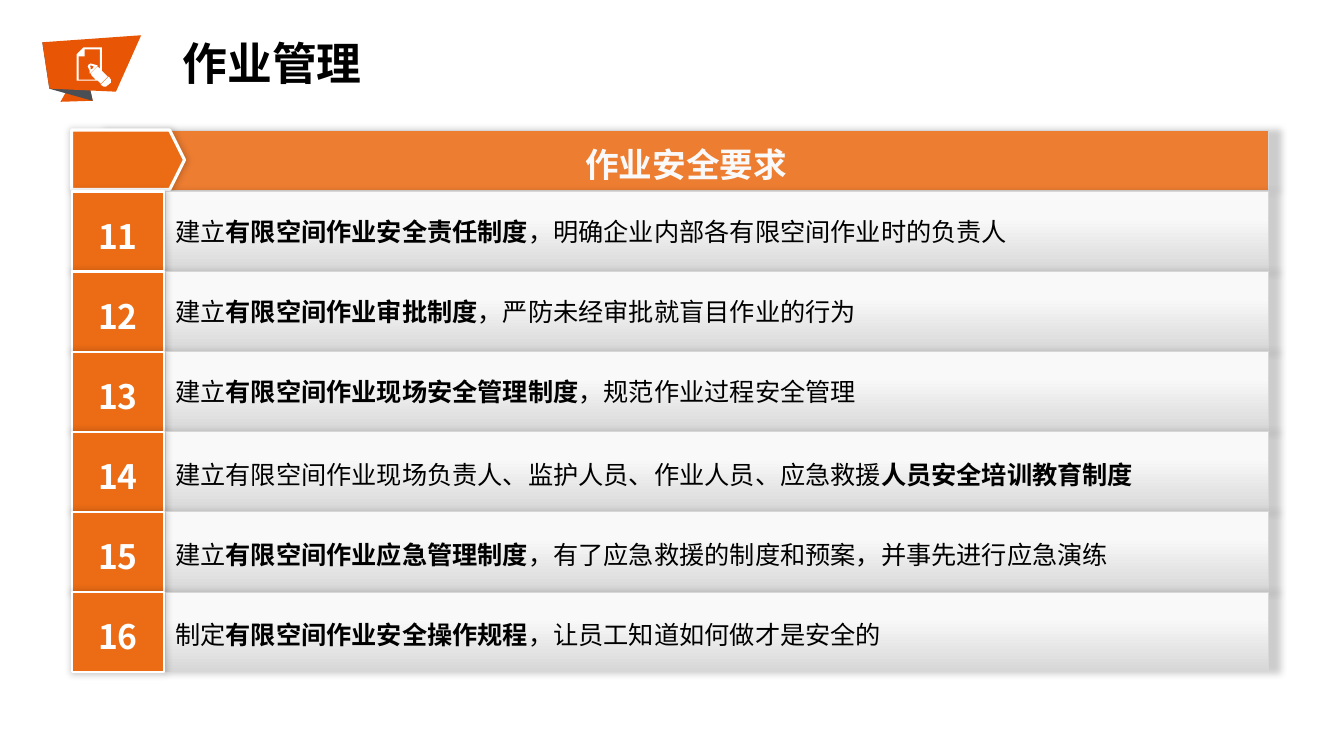
from dataclasses import dataclass

from lxml.etree import SubElement
from pptx import Presentation
from pptx.dml.color import RGBColor
from pptx.enum.shapes import MSO_SHAPE as Preset
from pptx.enum.text import MSO_ANCHOR as Anchor, PP_ALIGN as Align
from pptx.oxml.ns import qn
from pptx.shapes.autoshape import Shape
from pptx.slide import Slide
from pptx.text.text import TextFrame
from pptx.util import Inches, Pt

FONT = "Noto Sans CJK SC"
ORANGE, HEADER_ORANGE, ICON_ORANGE = "EB6C15", "ED7D31", "E85504"
LIGHT, GREY, SLATE, WHITE, BLACK = "F9F9F9", "D7D7D7", "494F54", "FFFFFF", "000000"

# Table grid, in inches
LEFT, BODY_LEFT, RIGHT = 0.71, 1.64, 12.58
HEADER_TOP, BODY_TOP, ROW_PITCH = 1.29, 1.9, 0.794
NUMBER_WIDTH, FIRST_NUMBER = 0.92, 11

Point = tuple[int, int]


@dataclass
class Span:
    text: str
    bold: bool = False


@dataclass
class Requirement:
    spans: list[Span]
    spacing: float = 1.0


@dataclass
class Outline:
    """Closed contours in hundredths of an inch."""
    color: str
    contours: list[list[Point]]


REQUIREMENTS = [
    Requirement([Span("建立"), Span("有限空间作业安全责任制度", True),
                 Span("，明确企业内部各有限空间作业时的负责人")]),
    Requirement([Span("建立"), Span("有限空间作业审批制度", True),
                 Span("，严防未经审批就盲目作业的行为")]),
    Requirement([Span("建立"), Span("有限空间作业现场安全管理制度", True),
                 Span("，规范作业过程安全管理")]),
    Requirement([Span("建立有限空间作业现场负责人、监护人员、作业人员、应急救援"),
                 Span("人员安全培训教育制度", True)], 1.2),
    Requirement([Span("建立"), Span("有限空间作业应急管理制度", True),
                 Span("，有了应急救援的制度和预案，并事先进行应急演练")], 1.2),
    Requirement([Span("制定"), Span("有限空间作业安全操作规程", True),
                 Span("，让员工知道如何做才是安全的")], 1.2),
]

PENCIL_END = [(110, 82), (105, 86), (103, 86), (100, 84), (108, 76), (110, 79)]
SHEET_INSIDE = [(99, 49), (84, 49), (84, 56), (78, 56), (78, 79), (95, 79), (91, 75),
                (90, 73), (97, 66), (99, 68)]
SHEET_AND_PENCIL = [(101, 82), (100, 83), (97, 80), (76, 80), (76, 54), (83, 47),
                    (101, 47), (101, 70), (107, 76)]
TIP_INSIDE = [(91, 65), (89, 65), (90, 67), (90, 69), (92, 68), (93, 66)]
TIP = [(93, 69), (89, 73), (89, 70), (87, 66), (88, 64), (90, 63), (94, 64), (97, 65)]

BADGE = [
    Outline(ICON_ORANGE, [[(92, 100), (83, 60), (60, 101)]]),
    Outline(SLATE, [[(83, 60), (42, 42), (49, 88), (92, 100)]]),
    Outline(ICON_ORANGE, [[(140, 35), (42, 42), (49, 88), (115, 91)]]),
    Outline(WHITE, [PENCIL_END, SHEET_INSIDE, SHEET_AND_PENCIL, TIP_INSIDE, TIP]),
]


def rgb(color: str) -> RGBColor:
    return RGBColor.from_string(color)


def add_glow_shadow(shape: Shape) -> None:
    """Give the shape a soft shadow one percent larger than itself."""
    shape.shadow.inherit = False
    effects = shape._element.spPr.find(qn("a:effectLst"))
    shadow = SubElement(effects, qn("a:outerShdw"), blurRad=str(Pt(5)), dist="0", dir="0",
                        sx="101000", sy="101000", algn="tl", rotWithShape="0")
    tint = SubElement(shadow, qn("a:srgbClr"), val=BLACK)
    SubElement(tint, qn("a:alpha"), val="20000")


def add_block(page: Slide, preset: Preset, left: float, top: float, width: float,
              height: float, line: str, weight: float, fill: str = "") -> Shape:
    """Add a shadowed shape; without a fill colour it gets the grey gradient."""
    shape = page.shapes.add_shape(preset, Inches(left), Inches(top),
                                  Inches(width), Inches(height))
    if fill:
        shape.fill.solid()
        shape.fill.fore_color.rgb = rgb(fill)
    else:
        shape.fill.gradient()
        shape.fill.gradient_angle = 270
        for stop, position, color in zip(shape.fill.gradient_stops, (0.33, 1), (LIGHT, GREY)):
            stop.position = position
            stop.color.rgb = rgb(color)
    shape.line.color.rgb = rgb(line)
    shape.line.width = Pt(weight)
    add_glow_shadow(shape)
    return shape


def write(frame: TextFrame, spans: list[Span], size: int, color: str,
          align: Align = Align.CENTER, spacing: float | Pt = 1.2) -> None:
    frame.vertical_anchor = Anchor.MIDDLE
    para = frame.paragraphs[0]
    para.alignment = align
    para.line_spacing = spacing
    font = para.font
    font.size = Pt(size)
    font.color.rgb = rgb(color)
    font.name = FONT
    defaults = para._p.pPr.find(qn("a:defRPr"))
    SubElement(defaults, qn("a:ea"), typeface=FONT)
    same_weight = len({span.bold for span in spans}) == 1
    if same_weight:
        font.bold = spans[0].bold
    for span in spans:
        run = para.add_run()
        run.text = span.text
        if not same_weight:
            run.font.bold = span.bold


def add_outline(page: Slide, outline: Outline) -> None:
    first, *others = outline.contours
    builder = page.shapes.build_freeform(*first[0], scale=Inches(0.01))
    builder.add_line_segments(first[1:])
    for contour in others:
        builder.move_to(*contour[0])
        builder.add_line_segments(contour[1:])
    shape = builder.convert_to_shape()
    shape.fill.solid()
    shape.fill.fore_color.rgb = rgb(outline.color)
    shape.line.fill.background()
    shape.shadow.inherit = False


def add_header(page: Slide) -> None:
    bar = add_block(page, Preset.RECTANGLE, 1.03, HEADER_TOP, RIGHT - 1.03, 0.6,
                    GREY, 0.25, HEADER_ORANGE)
    write(bar.text_frame, [Span("作业安全要求", True)], 24, LIGHT)
    arrow = add_block(page, Preset.PENTAGON, LEFT, HEADER_TOP, 1.12, 0.59,
                      WHITE, 2.25, ORANGE)
    arrow.adjustments[0] = 0.25


def add_requirement(page: Slide, index: int, item: Requirement) -> None:
    top = BODY_TOP + index * ROW_PITCH
    bar = add_block(page, Preset.RECTANGLE, BODY_LEFT, top, RIGHT - BODY_LEFT, 0.79,
                    GREY, 0.25)
    write(bar.text_frame, item.spans, 18, BLACK, Align.LEFT, item.spacing)
    number = add_block(page, Preset.RECTANGLE, LEFT, top, NUMBER_WIDTH, 0.8,
                       WHITE, 1.5, ORANGE)
    write(number.text_frame, [Span(str(FIRST_NUMBER + index), True)], 24, WHITE)


def add_title(page: Slide) -> None:
    box = page.shapes.add_textbox(Inches(1.7), Inches(0.51), Inches(2), Inches(0.46))
    write(box.text_frame, [Span("作业管理", True)], 32, BLACK, spacing=Pt(24))
    box.text_frame.vertical_anchor = Anchor.TOP
    box.text_frame.word_wrap = False


def main() -> None:
    deck = Presentation()
    deck.slide_width, deck.slide_height = Inches(13.33), Inches(7.5)
    page = deck.slides.add_slide(deck.slide_layouts[6])
    add_header(page)
    for index, item in enumerate(REQUIREMENTS):
        add_requirement(page, index, item)
    for outline in BADGE:
        add_outline(page, outline)
    add_title(page)
    deck.save("out.pptx")


if __name__ == "__main__":
    main()
